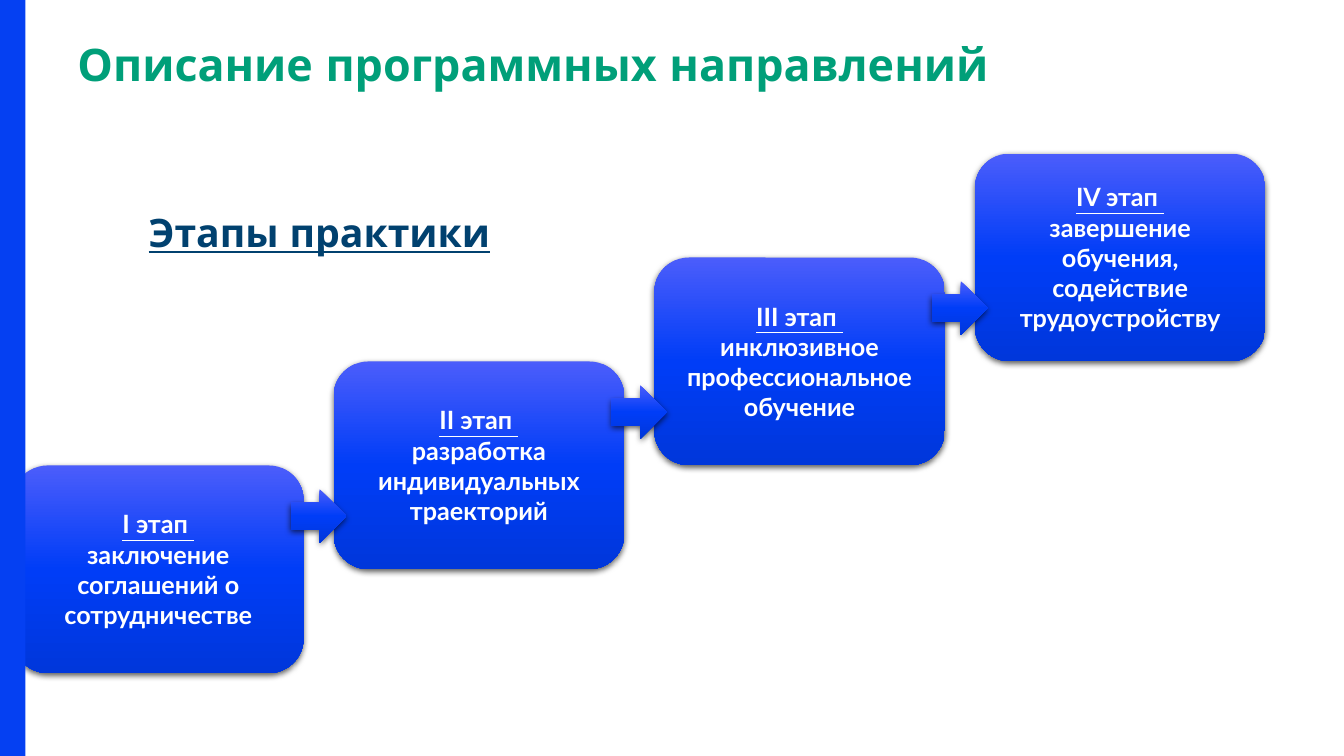
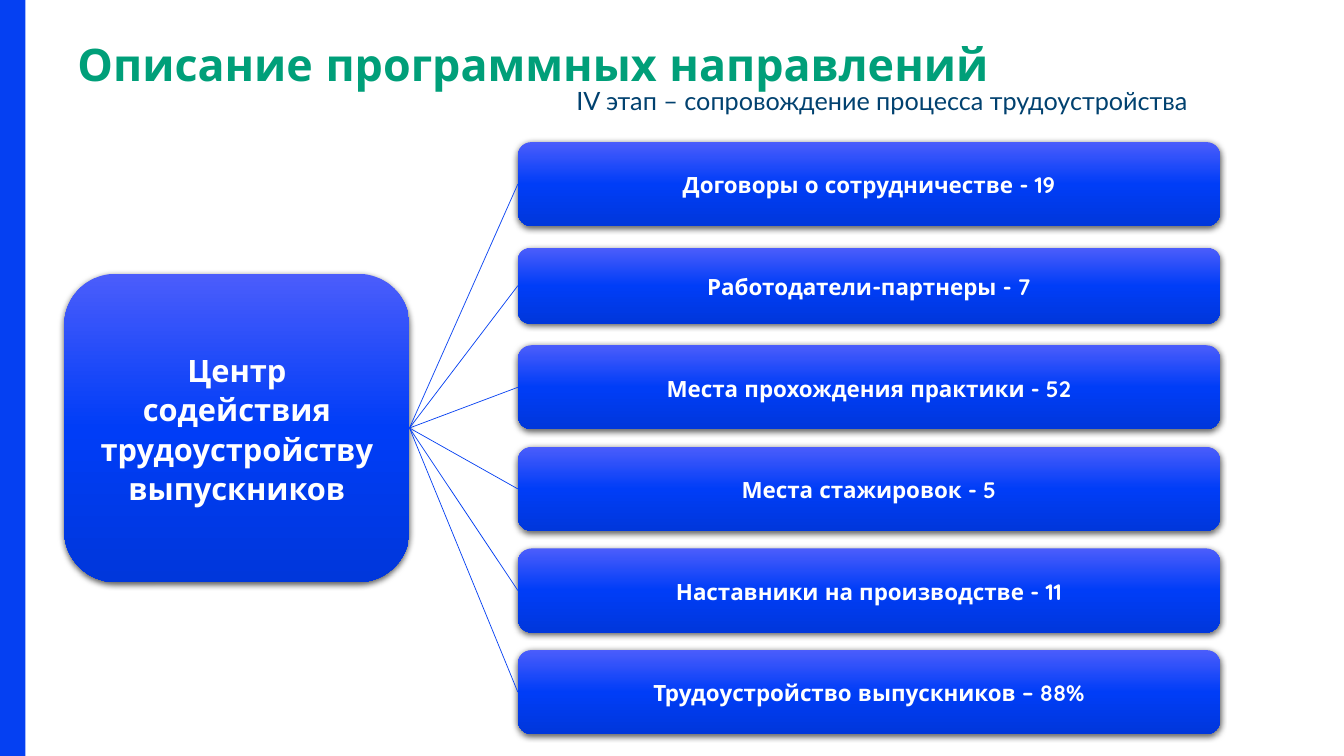
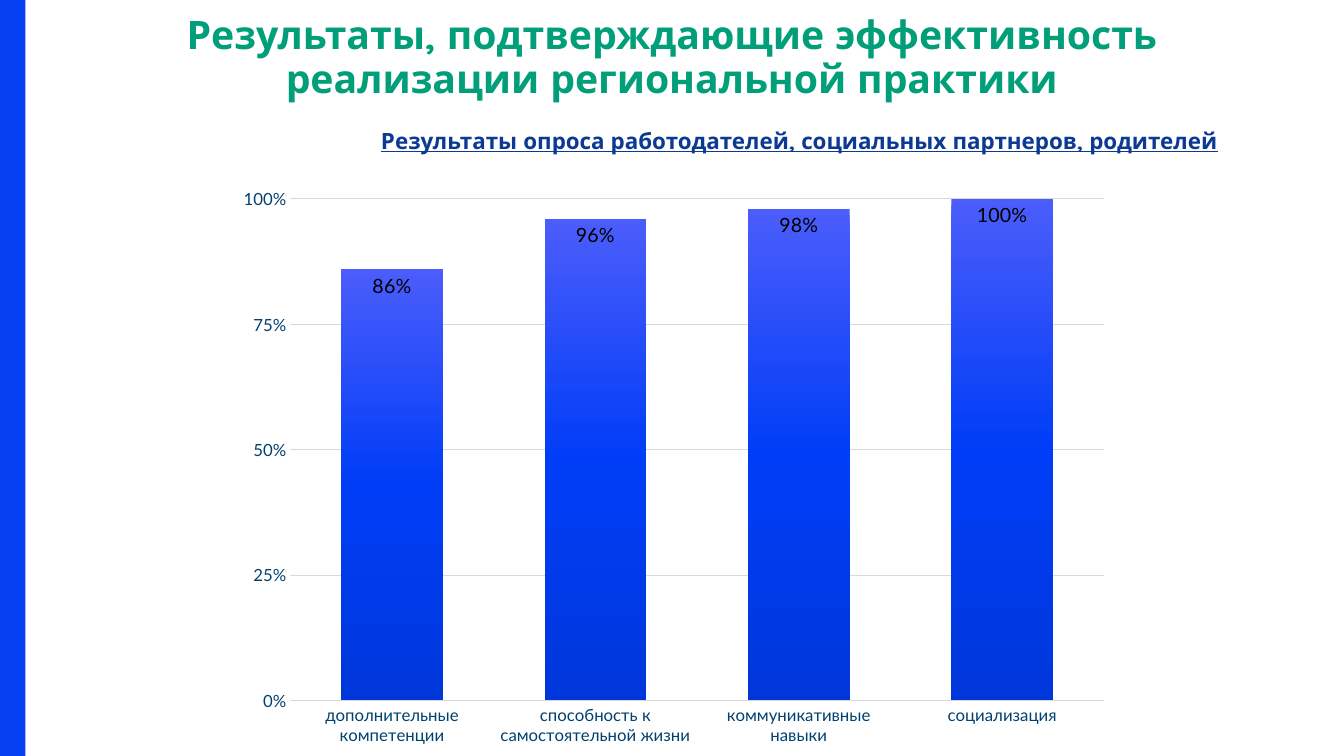
from copy import deepcopy

from pptx import Presentation
from pptx.chart.data import CategoryChartData
from pptx.dml.color import RGBColor
from pptx.enum.chart import XL_CHART_TYPE as ChartType
from pptx.enum.chart import XL_LABEL_POSITION as LabelPosition
from pptx.enum.chart import XL_TICK_MARK as TickMark
from pptx.enum.shapes import MSO_CONNECTOR as Connector
from pptx.enum.shapes import MSO_SHAPE as Shape
from pptx.enum.text import MSO_ANCHOR as Anchor
from pptx.enum.text import PP_ALIGN as Align
from pptx.oxml import parse_xml
from pptx.oxml.ns import nsdecls, qn
from pptx.util import Cm, Pt

# Shared style
rgb = RGBColor.from_string
BLUE, GREEN, NAVY, GREY, WHITE = "0540F2", "009F79", "01416F", "D9D9D9", "FFFFFF"
HEAD_FONT, BODY_FONT = "Quicksand", "Lato"
stops = "".join(
    f'<a:gs pos="{position}"><a:srgbClr val="{tint}"/></a:gs>'
    for position, tint in ((0, "4B5DFB"), (50000, "003DF7"), (100000, "0037DB"))
)
gloss = parse_xml(
    f'<a:gradFill {nsdecls("a")} rotWithShape="1"><a:gsLst>{stops}</a:gsLst>'
    '<a:lin ang="5400000" scaled="0"/></a:gradFill>'
)
shade = parse_xml(
    f'<a:outerShdw {nsdecls("a")} blurRad="57150" dist="19050" dir="5400000" '
    'algn="ctr" rotWithShape="0"><a:srgbClr val="000000">'
    '<a:alpha val="63000"/></a:srgbClr></a:outerShdw>'
)


def write(shape, lines, size, font, tint, bold=True, underlined=(), align=Align.CENTER, spacing=None):
    """Fill a shape with paragraphs; underlined holds the line numbers to underline."""
    frame = shape.text_frame
    frame.word_wrap = True
    for number, line in enumerate(lines):
        paragraph = frame.add_paragraph() if number else frame.paragraphs[0]
        paragraph.text = line
        paragraph.alignment = align
        paragraph.line_spacing = spacing
        paragraph.font.size = Pt(size)
        paragraph.font.name = font
        paragraph.font.bold = bold
        paragraph.font.underline = number in underlined
        paragraph.font.color.rgb = rgb(tint)


def add_glossy(slide, kind, left, top, width, height):
    """Add a shape with the blue gradient and the soft shadow; lengths in cm."""
    shape = slide.shapes.add_shape(kind, Cm(left), Cm(top), Cm(width), Cm(height))
    shape.fill.solid()
    shape.line.fill.background()
    shape.shadow.inherit = False
    properties = shape._element.spPr
    properties.replace(properties.find(qn("a:solidFill")), deepcopy(gloss))
    properties.find(qn("a:effectLst")).append(deepcopy(shade))
    shape.text_frame.vertical_anchor = Anchor.MIDDLE
    return shape


deck = Presentation()
deck.slide_width, deck.slide_height = Cm(33.87), Cm(19.05)
stages_slide, centre_slide, survey_slide = [
    deck.slides.add_slide(deck.slide_layouts[6]) for _ in range(3)
]

# Slide 1: staircase of stages
stages = [
    ("I этап ", "заключение соглашений о сотрудничестве"),
    ("II этап ", "разработка индивидуальных траекторий"),
    ("III этап ", "инклюзивное профессиональное обучение"),
    ("IV этап ", "завершение обучения, содействие трудоустройству"),
]
steps = [(0.33 + 8.08 * step, 11.73 - 2.62 * step) for step in range(len(stages))]
for stage, (left, top) in zip(stages, steps):
    card = add_glossy(stages_slide, Shape.FLOWCHART_ALTERNATE_PROCESS, left, top, 7.32, 5.23)
    write(card, stage, 18, BODY_FONT, WHITE, underlined=[0])
for left, top in steps[:-1]:
    add_glossy(stages_slide, Shape.RIGHT_ARROW, left + 7, top + 0.6, 1.4, 1.35)
stages_heading = stages_slide.shapes.add_textbox(Cm(0.8), Cm(5.13), Cm(14.5), Cm(1.37))
write(stages_heading, ["Этапы практики"], 28, HEAD_FONT, NAVY, underlined=[0])

# Slide 2: employment centre and its figures
stage_note = centre_slide.shapes.add_textbox(Cm(11.18), Cm(2.03), Cm(22.1), Cm(1.03))
write(stage_note, ["IV этап – сопровождение процесса трудоустройства"], 18, BODY_FONT, NAVY, bold=False)
centre = add_glossy(centre_slide, Shape.ROUNDED_RECTANGLE, 1.62, 6.9, 8.7, 7.77)
write(centre, ["Центр содействия трудоустройству выпускников"], 22, HEAD_FONT, WHITE, spacing=1.07)
figures = [
    ("Договоры о сотрудничестве - 19", 2.12),
    ("Работодатели-партнеры - 7", 1.91),
    ("Места прохождения практики - 52", 2.12),
    ("Места стажировок - 5", 2.12),
    ("Наставники на производстве - 11", 2.12),
    ("Трудоустройство выпускников – 88%", 2.12),
]
for row, (figure, height) in enumerate(figures):
    middle = 4.64 + 2.56 * row
    bar = add_glossy(centre_slide, Shape.ROUNDED_RECTANGLE, 13.05, middle - height / 2, 17.7, height)
    write(bar, [figure], 16, HEAD_FONT, WHITE, spacing=1.07)
    link = centre_slide.shapes.add_connector(Connector.STRAIGHT, 0, 0, 0, 0)
    link.begin_connect(centre, 3)
    link.end_connect(bar, 1)
    link.line.color.rgb = rgb(BLUE)
    link.line.width = Pt(0.5)
    link._element.spPr.append(parse_xml(f'<a:effectLst {nsdecls("a")}/>'))

# Slide 3: survey chart
survey_heading = survey_slide.shapes.add_textbox(Cm(8.5), Cm(3.07), Cm(23.3), Cm(0.94))
write(
    survey_heading, ["Результаты опроса работодателей, социальных партнеров, родителей"],
    16, HEAD_FONT, "0B3993", underlined=[0],
)
survey = CategoryChartData(number_format="0%")
survey.categories = [
    "дополнительные компетенции",
    "способность к самостоятельной жизни",
    "коммуникативные навыки",
    "социализация",
]
survey.add_series("Series 1", (0.86, 0.96, 0.98, 1))
chart = survey_slide.shapes.add_chart(
    ChartType.COLUMN_CLUSTERED, Cm(5.69), Cm(4.47), Cm(22.58), Cm(14.58), survey
).chart
chart.has_legend = False
chart.has_title = False
chart.font.size = Pt(10)
chart.font.name = "Calibri"
chart.font.color.rgb = rgb("000000")

plot = chart.plots[0]
plot.gap_width = 100
plot.overlap = -24
plot.vary_by_categories = False
answers = plot.series[0]
answers.format.fill.solid()
answers_style = answers._element.get_or_add_spPr()
answers_style.replace(answers_style.find(qn("a:solidFill")), deepcopy(gloss))

shares = answers.data_labels
shares.show_value = True
shares.position = LabelPosition.INSIDE_END
shares.number_format = "0%"
shares.number_format_is_linked = False
shares.font.size = Pt(14)
shares.font.name = BODY_FONT
shares.font.color.rgb = rgb("000000")

skills, percent = chart.category_axis, chart.value_axis
for axis in (skills, percent):
    axis.major_tick_mark = axis.minor_tick_mark = TickMark.NONE
    axis.tick_labels.font.size = Pt(12)
    axis.tick_labels.font.name = BODY_FONT
    axis.tick_labels.font.color.rgb = rgb(NAVY)
skills.format.line.color.rgb = rgb(GREY)
skills.format.line.width = Pt(1)
percent.format.line.fill.background()
percent.minimum_scale, percent.maximum_scale, percent.major_unit = 0, 1, 0.25
percent.tick_labels.number_format = "0%"
percent.tick_labels.number_format_is_linked = False
percent.major_gridlines.format.line.color.rgb = rgb(GREY)
percent.major_gridlines.format.line.width = Pt(0.75)

# Titles and side bands, in front of everything else
directions = "Описание программных направлений"
results = "Результаты, подтверждающие эффективность реализации региональной практики"
for slide, title, left, top, size, align in (
    (stages_slide, directions, 1.7, 1.02, 32, Align.LEFT),
    (centre_slide, directions, 1.7, 1.02, 32, Align.LEFT),
    (survey_slide, results, 1.78, 0.18, 28, Align.CENTER),
):
    heading = slide.shapes.add_textbox(Cm(left), Cm(top), Cm(30.3), Cm(1.24))
    write(heading, [title], size, HEAD_FONT, GREEN, align=align, spacing=Pt(32))
    band = slide.shapes.add_shape(Shape.RECTANGLE, 0, 0, Cm(0.64), deck.slide_height)
    band.shadow.inherit = False
    band.fill.solid()
    band.fill.fore_color.rgb = rgb(BLUE)
    band.line.fill.background()

deck.save("out.pptx")
